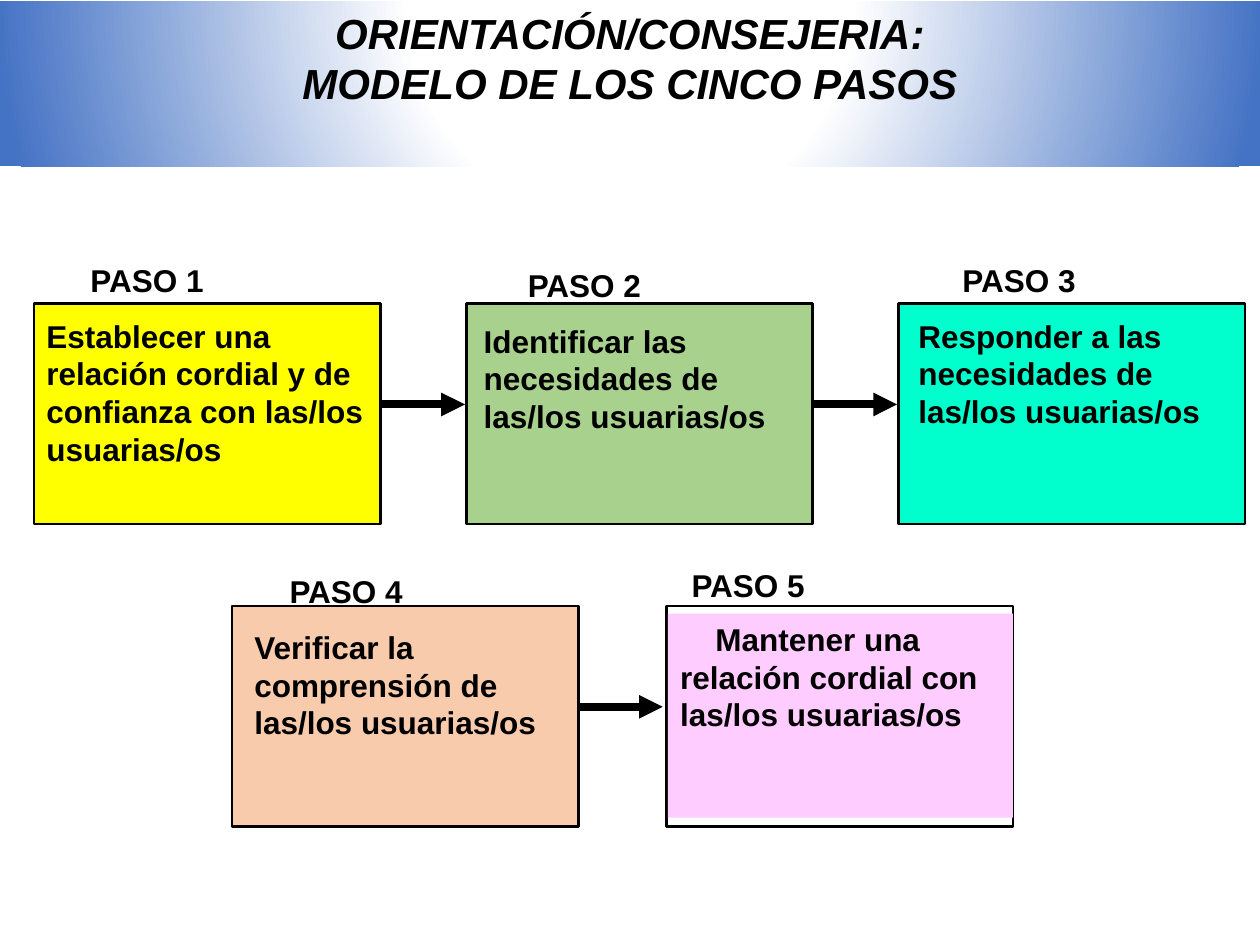
from pptx import Presentation
from pptx.dml.color import RGBColor
from pptx.enum.shapes import MSO_CONNECTOR, MSO_SHAPE
from pptx.enum.text import MSO_ANCHOR, PP_ALIGN
from pptx.oxml import parse_xml
from pptx.oxml.ns import nsdecls
from pptx.util import Inches, Pt
from lxml import etree

RECTANGLE = MSO_SHAPE.RECTANGLE
STRAIGHT = MSO_CONNECTOR.STRAIGHT
TOP = MSO_ANCHOR.TOP
LEFT, CENTER = PP_ALIGN.LEFT, PP_ALIGN.CENTER

BLACK = RGBColor(0x00, 0x00, 0x00)
WHITE = RGBColor(0xFF, 0xFF, 0xFF)
BLUE = RGBColor(0x44, 0x72, 0xC4)
YELLOW = RGBColor(0xFF, 0xFF, 0x00)
GREEN = RGBColor(0xA9, 0xD1, 0x8E)
TURQUOISE = RGBColor(0x00, 0xFF, 0xCC)
PEACH = RGBColor(0xF8, 0xCB, 0xAD)
PINK = RGBColor(0xFF, 0xCC, 0xFF)

SLIDE_WIDTH, SLIDE_HEIGHT = 10, 7.5
BOX_WIDTH, BOX_HEIGHT = 2.75, 1.75
ARROW_LENGTH, ARROW_DROP = 0.67, 0.8

# Each step: label, wording, fill, text offset from its box, text width, label indent
FIRST_ROW = [
    ("PASO 1", "Establecer una relación cordial y de confianza con las/los usuarias/os",
     YELLOW, (0, -0.39), 2.83, 0.35),
    ("PASO 2", "Identificar las necesidades de las/los usuarias/os",
     GREEN, (0.04, -0.35), 2.75, 0.35),
    ("PASO 3", "Responder a las necesidades de las/los usuarias/os",
     TURQUOISE, (0.06, -0.39), 2.75, 0.35),
]
SECOND_ROW = [
    ("PASO 4", "Verificar la comprensión de las/los usuarias/os",
     PEACH, (0.08, -0.32), 2.5, 0.28),
    ("PASO 5", None, WHITE, (0.1, -0.37), 1.11, 0),
]


def write_text(shape, lines, size=18, italic=False, align=LEFT, indent=0, gap=0, wrap=True):
    """Write one paragraph per line; indent moves the first line of the first one."""
    frame = shape.text_frame
    frame.word_wrap = wrap
    frame.vertical_anchor = TOP
    for index, line in enumerate(lines):
        paragraph = frame.add_paragraph() if index else frame.paragraphs[0]
        paragraph.alignment = align
        paragraph.space_before = Pt(gap if index else 0)
        if indent and not index:
            properties = paragraph._p.get_or_add_pPr()
            properties.set("marL", "0")
            properties.set("indent", str(Inches(indent)))
        run = paragraph.add_run()
        run.text = line
        font = run.font
        font.name, font.size = "Arial", Pt(size)
        font.bold, font.italic = True, italic
        font.color.rgb = BLACK


def add_rectangle(slide, left, top, width, height, fill=None, outlined=False):
    shape = slide.shapes.add_shape(
        RECTANGLE, Inches(left), Inches(top), Inches(width), Inches(height))
    shape.shadow.inherit = False
    if fill is not None:
        shape.fill.solid()
        shape.fill.fore_color.rgb = fill
    if outlined:
        shape.line.color.rgb = BLACK
        shape.line.width = Pt(1.5)
    else:
        shape.line.fill.background()
    return shape


def add_arrow(slide, left, top):
    arrow = slide.shapes.add_connector(
        STRAIGHT, Inches(left), Inches(top), Inches(left + ARROW_LENGTH), Inches(top))
    arrow.line.color.rgb = BLACK
    arrow.line.width = Pt(4.5)
    etree.SubElement(arrow.line._get_or_add_ln(), "{%s}tailEnd" % arrow._element.nsmap["a"],
                     type="triangle")
    arrow._element.spPr.append(parse_xml("<a:effectLst %s/>" % nsdecls("a")))


def add_header(slide, left, top, width, height):
    banner = add_rectangle(slide, left, top, width, height)
    stops = "".join(
        f'<a:gs pos="{share * 1000}"><a:srgbClr val="{color}"/></a:gs>'
        for share, color in [(0, WHITE), (35, WHITE), (100, BLUE)])
    gradient = parse_xml(
        f'<a:gradFill {nsdecls("a")} rotWithShape="1"><a:gsLst>{stops}</a:gsLst>'
        '<a:path path="circle"><a:fillToRect l="50000" t="-80000" r="50000" b="180000"/>'
        '</a:path></a:gradFill>')
    banner._element.spPr.prstGeom.addnext(gradient)
    write_text(banner, ["ORIENTACIÓN/CONSEJERIA:", "MODELO DE LOS CINCO PASOS"],
               size=24, italic=True, align=CENTER)


def add_step(slide, left, top, step):
    label, wording, fill, (across, down), width, indent = step
    add_rectangle(slide, left, top, BOX_WIDTH, BOX_HEIGHT, fill, outlined=True)
    lines = [label, wording] if wording else [label]
    text_box = slide.shapes.add_textbox(
        Inches(left + across), Inches(top + down), Inches(width),
        Inches(1.46 if wording else 0.4))
    write_text(text_box, lines, indent=indent, gap=10.35, wrap=bool(wording))


def add_row(slide, left, top, pitch, steps):
    for index, step in enumerate(steps):
        step_left = left + index * pitch
        add_step(slide, step_left, top, step)
        if index:
            add_arrow(slide, step_left - pitch + BOX_WIDTH, top + ARROW_DROP)


def add_closing_panel(slide, left, top, width, height):
    panel = add_rectangle(slide, left, top, width, height, PINK)
    write_text(panel, ["Mantener una relación cordial con las/los usuarias/os"], indent=0.28)


def main():
    presentation = Presentation()
    presentation.slide_width = Inches(SLIDE_WIDTH)
    presentation.slide_height = Inches(SLIDE_HEIGHT)
    slide = presentation.slides.add_slide(presentation.slide_layouts[6])
    add_row(slide, 0.27, 2.41, 3.43, FIRST_ROW)
    add_row(slide, 1.84, 4.81, 3.45, SECOND_ROW)
    add_closing_panel(slide, 5.3, 4.87, 2.74, 1.62)
    add_header(slide, 0, 0.01, SLIDE_WIDTH, 1.31)
    presentation.save("out.pptx")


if __name__ == "__main__":
    main()
